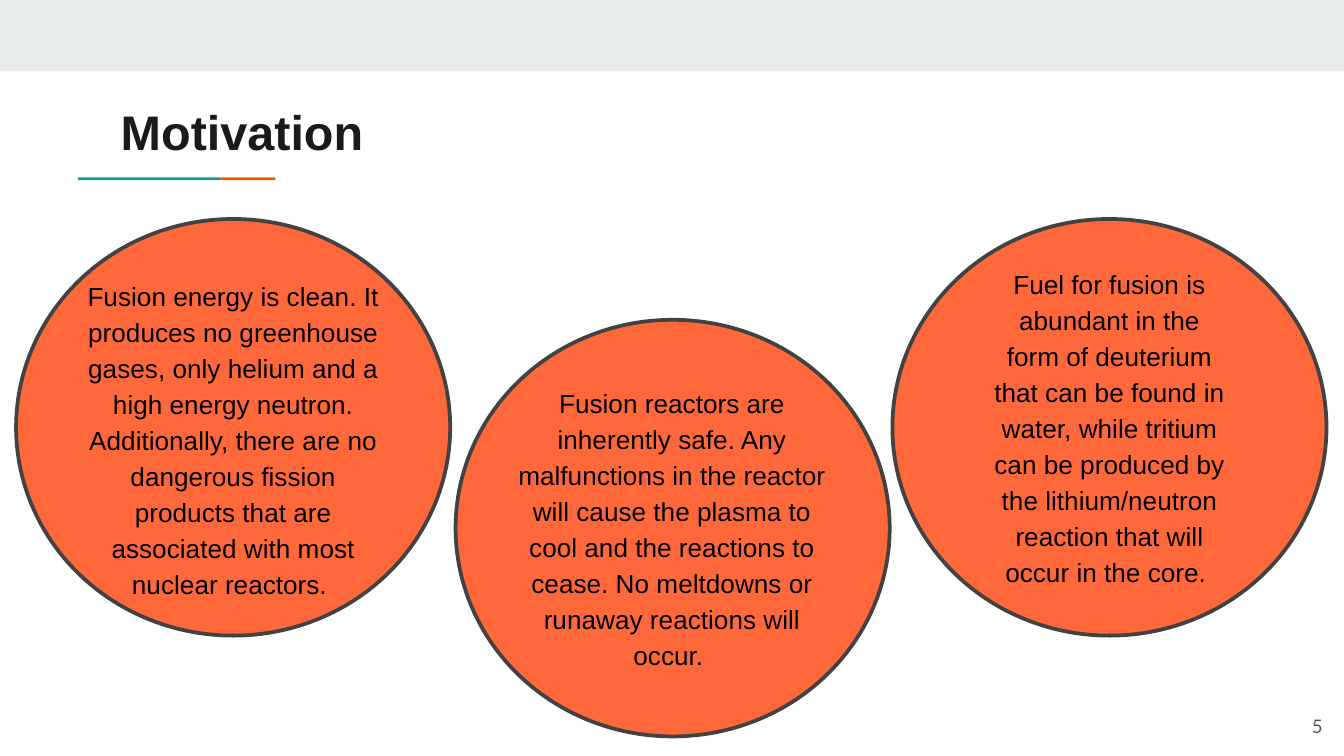
import pptx
import pptx.dml.color
import pptx.enum.shapes
import pptx.enum.text
import pptx.util

Inches = pptx.util.Inches
Pt = pptx.util.Pt
ALIGN = pptx.enum.text.PP_ALIGN
ANCHOR = pptx.enum.text.MSO_ANCHOR
SHAPE = pptx.enum.shapes.MSO_SHAPE

COLORS = {
    "band": "E9EDEE",
    "teal": "1A9988",
    "orange": "EB5600",
    "circle": "FF683A",
    "outline": "424242",
    "title": "1A1A1A",
    "text": "000000",
    "number": "595959",
}

SLIDE_W = 10
SLIDE_H = SLIDE_W * 9 / 16
CIRCLE_W, CIRCLE_H = 3.23, 3.1

# Circle left and top, text offset within the circle, text size, wording
REASONS = [
    (3.39, 2.38, 0.28, 0.42, 2.66, 2.27,
     "Fusion reactors are inherently safe. Any malfunctions in the reactor "
     "will cause the plasma to cool and the reactions to cease. No meltdowns "
     "or runaway reactions will occur. "),
    (0.12, 1.63, 0.39, 0.37, 2.45, 2.54,
     "Fusion energy is clean. It produces no greenhouse gases, only helium "
     "and a high energy neutron. Additionally, there are no dangerous fission "
     "products that are associated with most nuclear reactors. "),
    (6.64, 1.63, 0.66, 0.28, 1.91, 2.54,
     "Fuel for fusion is abundant in the form of deuterium that can be found "
     "in water, while tritium can be produced by the lithium/neutron reaction "
     "that will occur in the core. "),
]


def rgb(name):
    return pptx.dml.color.RGBColor.from_string(COLORS[name])


def add_filled(s, kind, x, y, w, h, fill, line=None):
    sp = s.shapes.add_shape(kind, Inches(x), Inches(y), Inches(w), Inches(h))
    sp.shadow.inherit = False
    sp.fill.solid()
    sp.fill.fore_color.rgb = rgb(fill)
    if line:
        sp.line.color.rgb = rgb(line)
        sp.line.width = Pt(2)
    else:
        sp.line.fill.background()


def add_text(s, x, y, w, h, text, size, color, font="Arial", bold=False,
             align=ALIGN.LEFT, anchor=ANCHOR.TOP, inset_y=0.1):
    sp = s.shapes.add_textbox(Inches(x), Inches(y), Inches(w), Inches(h))
    tf = sp.text_frame
    tf.word_wrap = True
    tf.vertical_anchor = anchor
    tf.margin_left = tf.margin_right = Inches(0.1)
    tf.margin_top = tf.margin_bottom = Inches(inset_y)
    tf.text = text
    p = tf.paragraphs[0]
    p.alignment = align
    r = p.runs[0]
    r.font.name = font
    r.font.size = Pt(size)
    r.font.bold = bold
    r.font.color.rgb = rgb(color)
    return p


def add_header(s, x, y, w):
    # Top band
    add_filled(s, SHAPE.RECTANGLE, x, y, w, 0.53, "band")
    # Two-colour underline and the title above it
    add_filled(s, SHAPE.RECTANGLE, x + 1.64, y + 1.32, 0.41, 0.02, "orange")
    add_filled(s, SHAPE.RECTANGLE, x + 0.58, y + 1.32, 1.06, 0.02, "teal")
    add_text(s, x + 0.8, y + 0.66, 8.41, 0.59, "Motivation", 26, "title", bold=True)


def add_reason(s, x, y, dx, dy, w, h, text):
    add_filled(s, SHAPE.OVAL, x, y, CIRCLE_W, CIRCLE_H, "circle", "outline")
    p = add_text(s, x + dx, y + dy, w, h, text, 14, "text",
                 align=ALIGN.CENTER, inset_y=0.05)
    p.line_spacing = 1.15
    p.space_after = Pt(16)


def main():
    prs = pptx.Presentation()
    prs.slide_width, prs.slide_height = Inches(SLIDE_W), Inches(SLIDE_H)
    s = prs.slides.add_slide(prs.slide_layouts[6])

    add_header(s, 0, 0, SLIDE_W)

    # Slide number
    add_text(s, 9.34, 5.19, 0.6, 0.43, "5", 10, "number", font="Lato",
             align=ALIGN.RIGHT, anchor=ANCHOR.MIDDLE)

    # Three reasons in circles
    for reason in REASONS:
        add_reason(s, *reason)

    prs.save("out.pptx")


if __name__ == "__main__":
    main()
